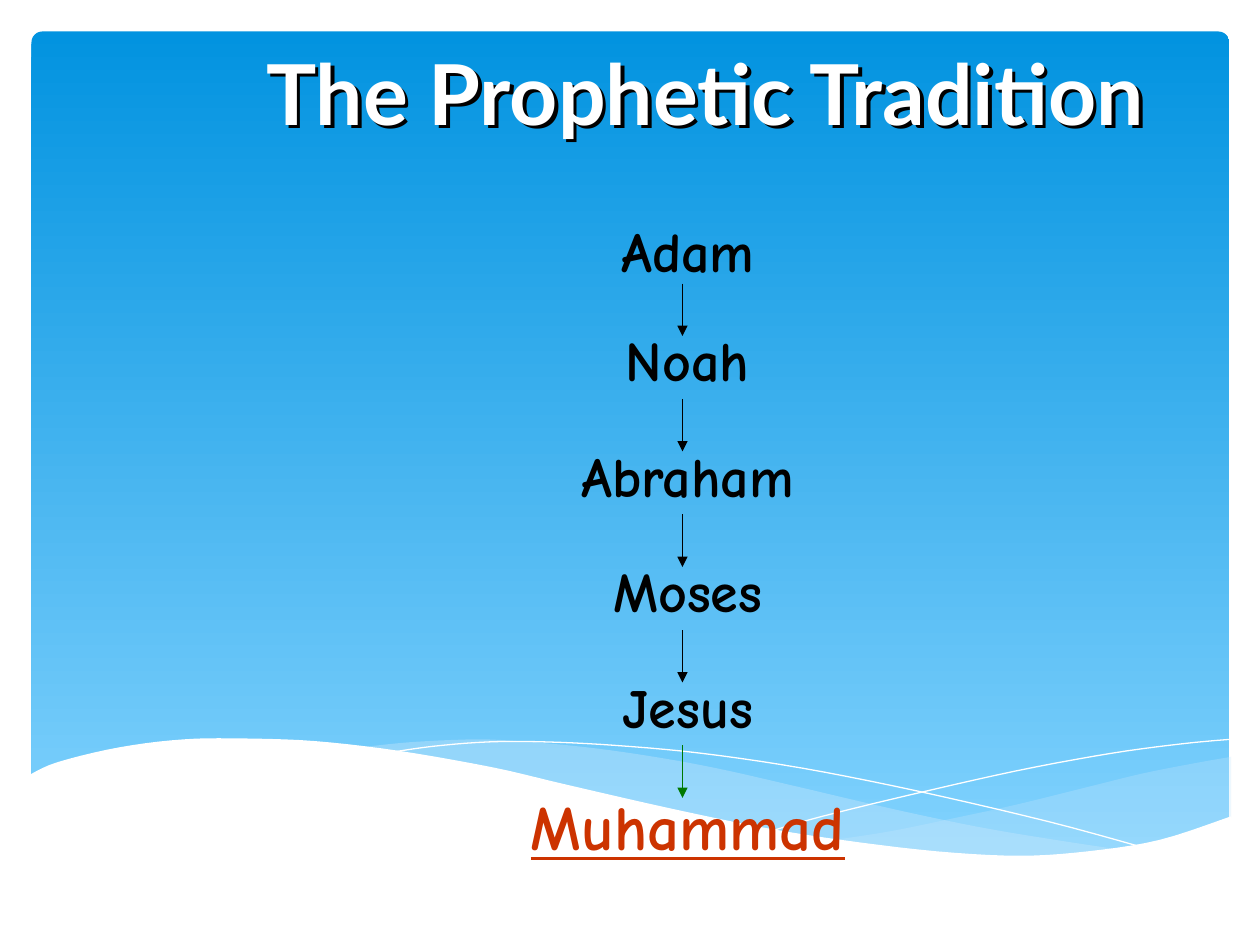
"""Build the slide tracing the prophetic tradition from Adam to Muhammad."""
from dataclasses import dataclass
from typing import Optional

from lxml.etree import SubElement
from pptx import Presentation
from pptx.dml.color import RGBColor
from pptx.enum.shapes import MSO_CONNECTOR, MSO_SHAPE
from pptx.enum.text import PP_ALIGN
from pptx.oxml.ns import qn
from pptx.util import Pt

Point = tuple[float, float]


@dataclass(frozen=True)
class Theme:
    white: str = "FFFFFF"
    black: str = "000000"
    sky_top: str = "0293E0"
    sky_bottom: str = "83D3FE"
    mist: str = "C6E7FC"
    last_name: str = "CC3300"
    last_arrow: str = "007800"
    title_font: str = "Lato"
    name_font: str = "Comic Neue"
    title_size: float = 48
    name_size: float = 32
    last_size: float = 36
    arrow_width: float = 0.75


@dataclass(frozen=True)
class Label:
    text: str
    left: float
    top: float
    width: float
    height: float
    font: str
    size: float
    color: str
    underline: Optional[bool] = None
    shadow: bool = False


@dataclass(frozen=True)
class Wave:
    edges: tuple[tuple[Point, ...], ...]
    fill: Optional[str] = None
    opacity: int = 100


THEME = Theme()
FIRST_TOP, SECOND_TOP, ARROW_TOP, STEP = 120, 182.5, 162, 66
ARROW_X, ARROW_LENGTH = 390, 30

WAVES = (
    Wave((((703.5, 432.5), (683.5, 436), (653, 442), (620.5, 450), (580, 460),
           (543, 468), (509, 475), (476.5, 480)),
          ((476.5, 480), (518, 485), (558, 488.5), (594, 489), (629, 487),
           (664, 480), (703.5, 467))), THEME.mist, 29),
    Wave((((643.5, 486), (603.5, 480), (559, 472.5), (509, 462), (453.5, 449),
           (409.5, 439), (371, 432), (335, 427), (302.5, 424), (273.5, 422.5),
           (236, 424), (206.5, 427)),
          ((206.5, 427), (247, 432.5), (291.5, 441.5), (324, 449), (381.5, 462),
           (433.5, 473), (479.5, 481), (520.5, 486.5), (557, 489), (589.5, 489.5),
           (618, 488.5), (643.5, 486))), THEME.mist, 40),
    Wave((((223, 430), (247.5, 426.5), (279, 424), (312, 424), (352, 426),
           (401, 430.5), (458.5, 439), (524, 452), (599, 469.5), (654, 484.5)),)),
    Wave((((442, 474.5), (470, 466.5), (519, 454.5), (581, 440.5), (635, 430.5),
           (676, 425), (703, 422.5)),)),
    Wave((((16.5, 443), (33, 435.5), (68.5, 427), (105, 422.5), (139, 422),
           (180, 423.5), (227.5, 429), (281.5, 438.5), (322, 448), (381, 461.5),
           (434, 472.5), (481, 480), (535.5, 486.5), (582.5, 489), (621.5, 486.5),
           (662.5, 480), (703.5, 466.5)),
          ((703.5, 526.5), (16.5, 526.5))), THEME.white),
)


def rgb(color: str) -> RGBColor:
    return RGBColor.from_string(color)


def smooth(knots: tuple[Point, ...], steps: int = 5) -> list[Point]:
    if len(knots) < 3:
        return list(knots)
    padded = (knots[0], *knots, knots[-1])
    curve = [knots[0]]
    for a, b, c, d in zip(padded, padded[1:], padded[2:], padded[3:]):
        for step in range(1, steps + 1):
            t = step / steps
            x, y = (
                (2 * q + (r - p) * t + (2 * p - 5 * q + 4 * r - s) * t**2
                 + (3 * q - p - 3 * r + s) * t**3) / 2
                for p, q, r, s in zip(a, b, c, d)
            )
            curve.append((x, y))
    return curve


def draw_sky(shapes) -> None:
    sky = shapes.add_shape(MSO_SHAPE.ROUNDED_RECTANGLE, Pt(18), Pt(18), Pt(684.5), Pt(475))
    sky.adjustments[0] = 0.013
    sky.shadow.inherit = False
    sky.line.fill.background()
    sky.fill.gradient()
    sky.fill.gradient_angle = 270
    for stop, position, color in zip(sky.fill.gradient_stops, (0, 1),
                                     (THEME.sky_top, THEME.sky_bottom)):
        stop.position = position
        stop.color.rgb = rgb(color)


def draw_wave(shapes, wave: Wave) -> None:
    outline = [(Pt(x), Pt(y)) for edge in wave.edges for x, y in smooth(edge)]
    builder = shapes.build_freeform(*outline[0], scale=1.0)
    builder.add_line_segments(outline[1:], close=wave.fill is not None)
    band = builder.convert_to_shape()
    band.shadow.inherit = False
    if wave.fill is None:
        band.fill.background()
        band.line.color.rgb = rgb(THEME.white)
        band.line.width = Pt(0)
        return
    band.line.fill.background()
    band.fill.solid()
    band.fill.fore_color.rgb = rgb(wave.fill)
    if wave.opacity < 100:
        tint = band._element.spPr.find(qn("a:solidFill"))[0]
        SubElement(tint, qn("a:alpha"), val=str(wave.opacity * 1000))


def draw_label(shapes, label: Label) -> None:
    box = shapes.add_textbox(Pt(label.left), Pt(label.top), Pt(label.width), Pt(label.height))
    box.text_frame.word_wrap = True
    paragraph = box.text_frame.paragraphs[0]
    paragraph.alignment = PP_ALIGN.CENTER
    run = paragraph.add_run()
    run.text = label.text
    run.font.name = label.font
    run.font.size = Pt(label.size)
    run.font.bold = True
    run.font.underline = label.underline
    run.font.color.rgb = rgb(label.color)
    if label.shadow:
        effects = SubElement(box._element.spPr, qn("a:effectLst"))
        shade = SubElement(effects, qn("a:outerShdw"), dist=str(Pt(3)), dir="2700000",
                           algn="ctr", rotWithShape="0")
        SubElement(shade, qn("a:srgbClr"), val=THEME.black)


def draw_arrow(shapes, top: float, color: str) -> None:
    arrow = shapes.add_connector(MSO_CONNECTOR.STRAIGHT, Pt(ARROW_X), Pt(top),
                                 Pt(ARROW_X), Pt(top + ARROW_LENGTH))
    arrow.line.color.rgb = rgb(color)
    arrow.line.width = Pt(THEME.arrow_width)
    SubElement(arrow.line._get_or_add_ln(), qn("a:tailEnd"), type="triangle")
    SubElement(arrow._element.spPr, qn("a:effectLst"))


def main() -> None:
    deck = Presentation()
    deck.slide_width, deck.slide_height = Pt(720), Pt(540)
    shapes = deck.slides.add_slide(deck.slide_layouts[6]).shapes
    draw_sky(shapes)
    for wave in WAVES:
        draw_wave(shapes, wave)
    draw_label(shapes, Label("The Prophetic Tradition", 136, 20, 534, 65.5, THEME.title_font,
                             THEME.title_size, THEME.white, shadow=True))
    prophets = ("Adam", "Noah", "Abraham", "Moses", "Jesus")
    tops = [FIRST_TOP] + [SECOND_TOP + STEP * i for i in range(len(prophets))]
    for prophet, top in zip(prophets, tops):
        draw_label(shapes, Label(prophet, 240, top, 306, 45.5, THEME.name_font,
                                 THEME.name_size, THEME.black))
    draw_label(shapes, Label("Muhammad", 240, tops[-1], 306, 50.5, THEME.name_font,
                             THEME.last_size, THEME.last_name, underline=True))
    for i, prophet in enumerate(prophets):
        color = THEME.last_arrow if prophet == prophets[-1] else THEME.black
        draw_arrow(shapes, ARROW_TOP + STEP * i, color)
    deck.save("out.pptx")


if __name__ == "__main__":
    main()
